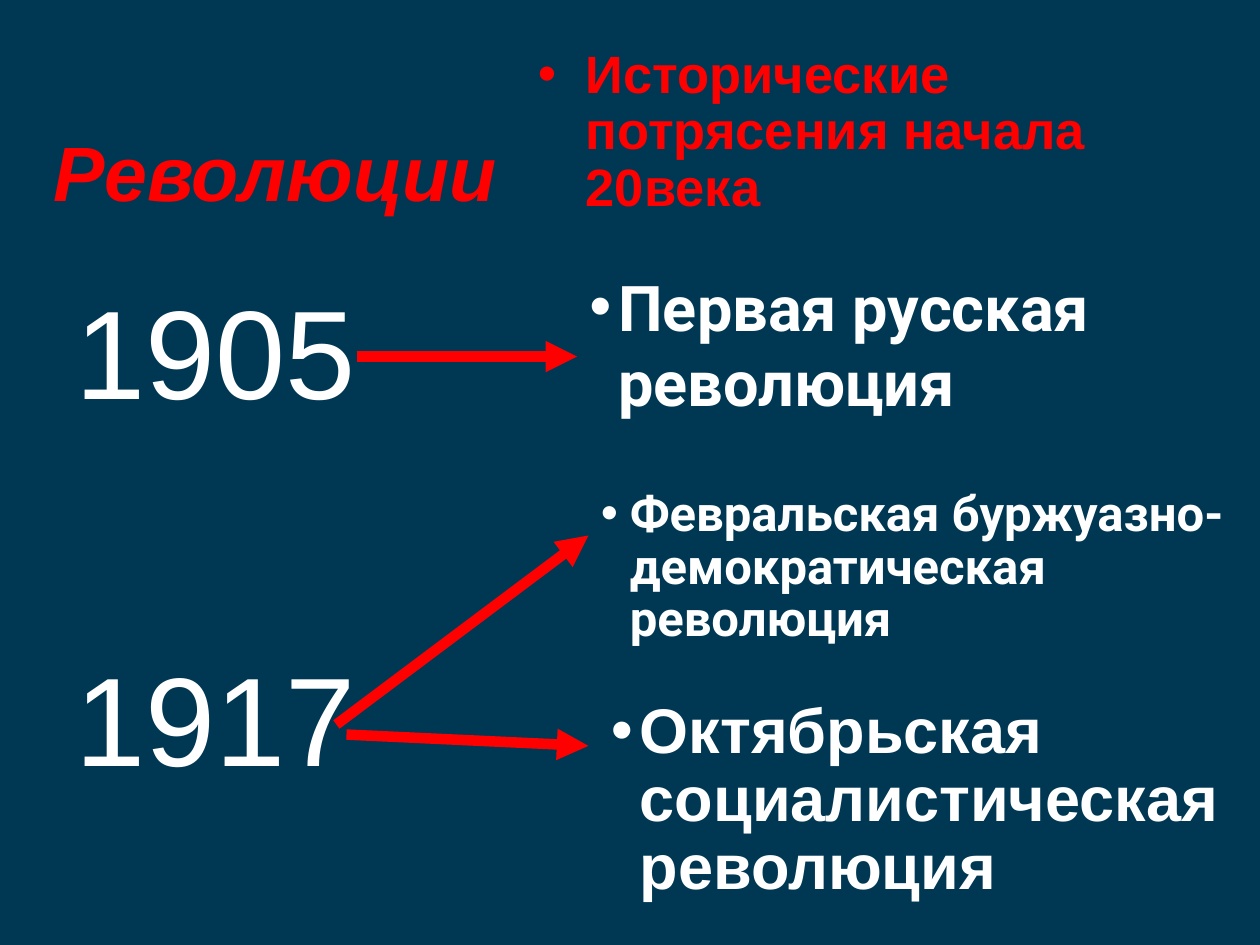
from dataclasses import dataclass

from lxml.etree import SubElement
from pptx import Presentation
from pptx.dml.color import RGBColor as RGB
from pptx.enum.shapes import MSO_CONNECTOR as CONN
from pptx.enum.text import MSO_ANCHOR as ANCHOR
from pptx.oxml.ns import qn
from pptx.util import Inches, Pt


@dataclass(frozen=True)
class Theme:
    background: RGB = RGB(0x00, 0x38, 0x54)
    accent: RGB = RGB(0xFF, 0x00, 0x00)
    text: RGB = RGB(0xFF, 0xFF, 0xFF)
    font: str = "Arial"
    alt_font: str = "Roboto"
    year: int = 72
    title: int = 44
    event: int = 36
    heading: int = 30
    small_event: int = 28
    arrow: int = 6


class SlideBuilder:
    def __init__(self, prs, theme):
        self.theme = theme
        self.s = prs.slides.add_slide(prs.slide_layouts[6])
        fill = self.s.background.fill
        fill.solid()
        fill.fore_color.rgb = theme.background

    def text(self, box, text, size, color, font=None, bold=True, italic=False,
             spacing=1.0, anchor=ANCHOR.TOP):
        sp = self.s.shapes.add_textbox(*map(Inches, box))
        tf = sp.text_frame
        tf.word_wrap = True
        tf.vertical_anchor = anchor
        tf.text = text
        for p in tf.paragraphs:
            p.line_spacing = spacing
            for r in p.runs:
                r.font.name = font or self.theme.font
                r.font.size = Pt(size)
                r.font.bold = bold
                r.font.italic = italic
                r.font.color.rgb = color
        return tf

    def bullet(self, box, text, size, color, indent=0.23, **style):
        """Add a text box whose paragraphs have hanging bullets."""
        tf = self.text(box, text, size, color, **style)
        for p in tf.paragraphs:
            pPr = p._p.get_or_add_pPr()
            pPr.set("marL", str(Inches(indent)))
            pPr.set("indent", str(-Inches(indent)))
            SubElement(pPr, qn("a:buFont")).set("typeface", self.theme.font)
            SubElement(pPr, qn("a:buChar")).set("char", "•")

    def years(self, box, years, gap):
        tf = self.text(box, "\n".join(years), self.theme.year, self.theme.text,
                       bold=False, spacing=0.8)
        for p in tf.paragraphs[1:]:
            p.space_before = Pt(gap)

    def arrow(self, start, end):
        c = self.s.shapes.add_connector(CONN.STRAIGHT, *map(Inches, start + end))
        c.line.color.rgb = self.theme.accent
        c.line.width = Pt(self.theme.arrow)
        SubElement(c.line._get_or_add_ln(), qn("a:tailEnd")).set("type", "triangle")
        SubElement(c._element.spPr, qn("a:effectLst"))


def main():
    prs = Presentation()
    prs.slide_width, prs.slide_height = Inches(10), Inches(7.5)
    t = Theme()
    slide = SlideBuilder(prs, t)

    slide.text((0.33, 0.5, 9.19, 1.27), "Революции", t.title, t.accent,
               italic=True, anchor=ANCHOR.BOTTOM)
    slide.bullet((4.17, 0.33, 5.59, 1.67), "Исторические потрясения начала 20века",
                 t.heading, t.accent, indent=0.38, spacing=0.9)
    slide.years((0.5, 2.35, 3.29, 4.11), ("1905", "1917"), gap=141)

    slide.bullet((4.67, 3.83, 5.33, 2.02),
                 "Февральская буржуазно-демократическая революция",
                 t.small_event, t.text, font=t.alt_font, spacing=0.9)
    slide.bullet((4.75, 5.5, 5.25, 1.72), "Октябрьская социалистическая революция",
                 t.event, t.text, spacing=0.9)
    slide.bullet((4.58, 2.08, 4.58, 1.3), "Первая русская революция",
                 t.event, t.text, font=t.alt_font)

    for start, end in (((2.83, 2.83), (4.58, 2.83)),
                       ((2.67, 5.75), (4.67, 4.25)),
                       ((2.75, 5.83), (4.67, 5.92))):
        slide.arrow(start, end)

    prs.save("out.pptx")


if __name__ == "__main__":
    main()
